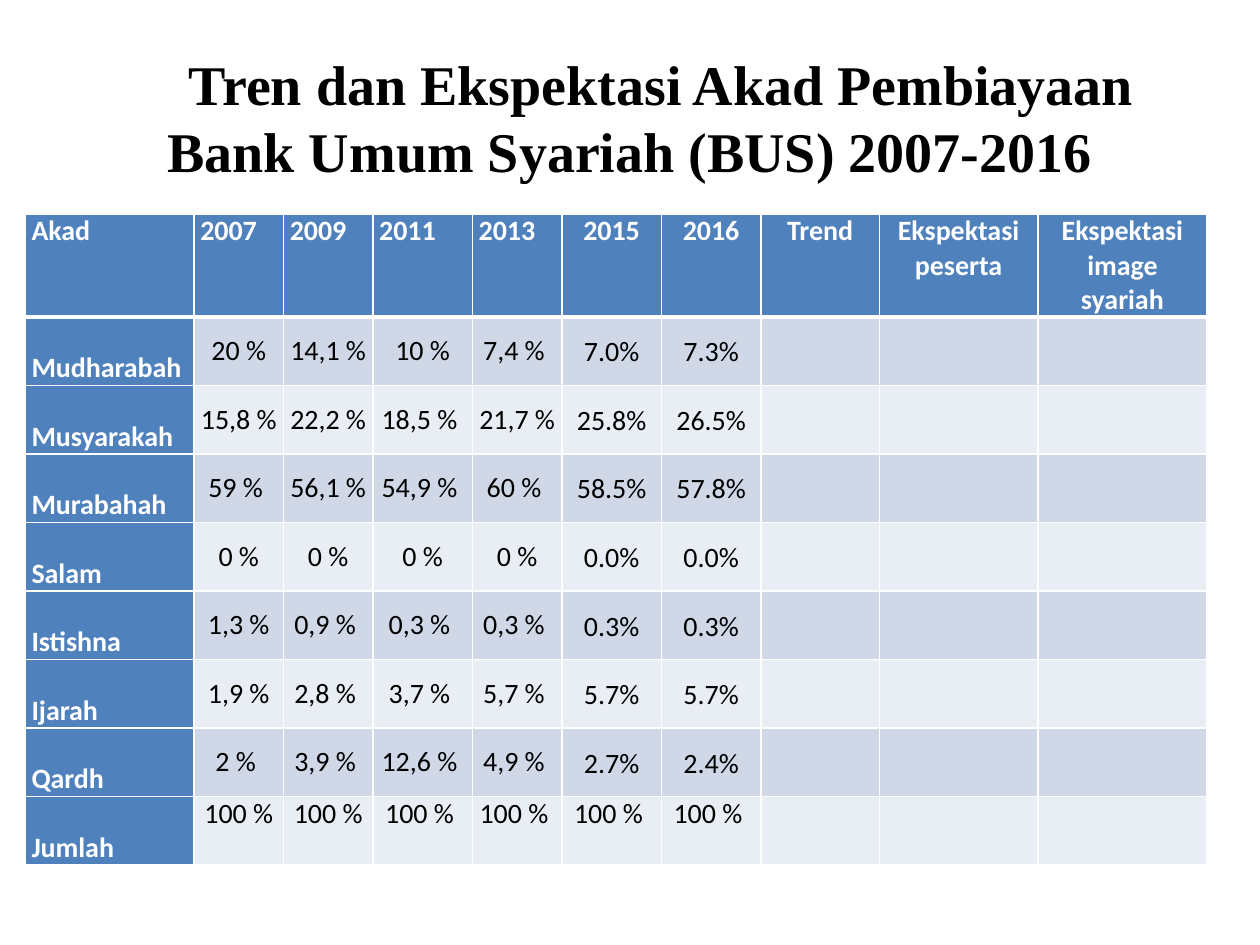
"""Build the slide on trends in Islamic bank financing contracts, 2007-2016."""
from dataclasses import dataclass

from lxml import etree
from pptx import Presentation
from pptx import util as u
from pptx.dml.color import RGBColor
from pptx.enum import text
from pptx.oxml.ns import qn

COLORS = {"head": "4F81BD", "odd": "D0D8E8", "even": "E9EDF4",
          "light": "FFFFFF", "ink": "000000"}
COLUMN_WIDTHS = [96.48, 51.12, 51.12, 56.88, 51.12, 56.88, 56.88, 67.68, 90.72, 96.48]
ROW_HEIGHT = 34.56
HEADINGS = ["Akad", "2007", "2009", "2011", "2013", "2015", "2016",
            "Trend", "Ekspektasi\npeserta", "Ekspektasi image syariah"]
ALIGN = text.PP_ALIGN


@dataclass
class Contract:
    name: str
    shares: list[str]


@dataclass
class CellStyle:
    fill: str
    ink: str = "ink"
    bold: bool = False
    align: ALIGN = ALIGN.CENTER
    spacing: float = 1.0
    inset: float = 3.6
    inset_top: float = 0
    top_line: float = 1
    bottom_line: float = 1


CONTRACTS = [
    Contract("Mudharabah", ["20 %", "14,1 %", "10 %", "7,4 % ", "7.0%", "7.3%"]),
    Contract("Musyarakah", ["15,8 % ", "22,2 % ", "18,5 % ", "21,7 % ", "25.8%", "26.5%"]),
    Contract("Murabahah", ["59 % ", "56,1 % ", "54,9 % ", "60 % ", "58.5%", "57.8%"]),
    Contract("Salam", ["0 %", "0 %", "0 %", "0 %", "0.0%", "0.0%"]),
    Contract("Istishna", ["1,3 %", "0,9 % ", "0,3 % ", "0,3 % ", "0.3%", "0.3%"]),
    Contract("Ijarah", ["1,9 %", "2,8 % ", "3,7 % ", "5,7 % ", "5.7%", "5.7%"]),
    Contract("Qardh", ["2 % ", "3,9 % ", "12,6 % ", "4,9 % ", "2.7%", "2.4%"]),
    Contract("Jumlah", ["100 %", "100 %", "100 % ", "100 % ", "100 % ", "100 % "]),
]


def rgb(key: str) -> RGBColor:
    return RGBColor.from_string(COLORS[key])


def format_font(font, face: str, size: float, color: str, bold: bool) -> None:
    font.name, font.size, font.bold = face, u.Pt(size), bold
    font.color.rgb = rgb(color)


def add_borders(cell, top: float, bottom: float) -> None:
    properties = cell._tc.get_or_add_tcPr()
    for side, width in (("L", 1), ("R", 1), ("T", top), ("B", bottom)):
        line = etree.SubElement(properties, qn(f"a:ln{side}"), w=str(u.Pt(width)))
        solid = etree.SubElement(line, qn("a:solidFill"))
        etree.SubElement(solid, qn("a:srgbClr"), val=COLORS["light"])


def fill_cell(cell, wording: str, style: CellStyle) -> None:
    add_borders(cell, style.top_line, style.bottom_line)
    cell.fill.solid()
    cell.fill.fore_color.rgb = rgb(style.fill)
    if not wording:
        return
    cell.margin_left = cell.margin_right = u.Pt(style.inset)
    cell.margin_top, cell.margin_bottom = u.Pt(style.inset_top), u.Pt(0)
    cell.text_frame.text = wording
    for paragraph in cell.text_frame.paragraphs:
        paragraph.alignment = style.align
        paragraph.line_spacing = style.spacing
        format_font(paragraph.font, "Calibri", 16, style.ink, style.bold)


def fill_headings(table) -> None:
    for column, heading in enumerate(HEADINGS):
        align = ALIGN.JUSTIFY if column < 5 else ALIGN.CENTER
        fill_cell(table.cell(0, column), heading,
                  CellStyle("head", "light", True, align, bottom_line=3))


def fill_contract(table, row: int, contract: Contract) -> None:
    top_line = 3 if row == 1 else 1
    band = "odd" if row % 2 else "even"
    is_total = row == len(CONTRACTS)
    fill_cell(table.cell(row, 0), contract.name,
              CellStyle("head", "light", True, ALIGN.JUSTIFY, 2.0, top_line=top_line))
    blanks = [""] * (len(HEADINGS) - 1 - len(contract.shares))
    for column, share in enumerate(contract.shares + blanks, 1):
        style = CellStyle(band, spacing=1.0 if is_total else 1.5, top_line=top_line)
        if column >= 5 and not is_total:
            style.inset = style.inset_top = 0.72
        fill_cell(table.cell(row, column), share, style)


def add_title(slide) -> None:
    title = slide.shapes.title
    title.left, title.top = u.Pt(36), u.Pt(21.6)
    title.width, title.height = u.Pt(648), u.Pt(90)
    title.text_frame.text = ("Tren dan Ekspektasi Akad Pembiayaan "
                             "Bank Umum Syariah (BUS) 2007-2016")
    title.text_frame.vertical_anchor = text.MSO_ANCHOR.MIDDLE
    paragraph = title.text_frame.paragraphs[0]
    paragraph.alignment = ALIGN.CENTER
    properties = paragraph._p.get_or_add_pPr()
    properties.set("marL", "0")
    properties.set("indent", str(u.Pt(36)))
    format_font(paragraph.font, "Times New Roman", 32, "ink", True)


def add_contract_table(slide) -> None:
    row_count = len(CONTRACTS) + 1
    frame = slide.shapes.add_table(
        row_count, len(HEADINGS), u.Pt(14.4), u.Pt(122.4),
        u.Pt(sum(COLUMN_WIDTHS)), u.Pt(row_count * ROW_HEIGHT))
    table = frame.table
    table.first_col = True
    for column, width in zip(table.columns, COLUMN_WIDTHS):
        column.width = u.Pt(width)
    for row in table.rows:
        row.height = u.Pt(ROW_HEIGHT)
    fill_headings(table)
    for row, contract in enumerate(CONTRACTS, 1):
        fill_contract(table, row, contract)
    frame.height = u.Pt(365.04)


def main() -> None:
    deck = Presentation()
    deck.slide_width, deck.slide_height = u.Pt(720), u.Pt(540)
    slide = deck.slides.add_slide(deck.slide_layouts[5])
    add_title(slide)
    add_contract_table(slide)
    deck.save("out.pptx")


if __name__ == "__main__":
    main()
